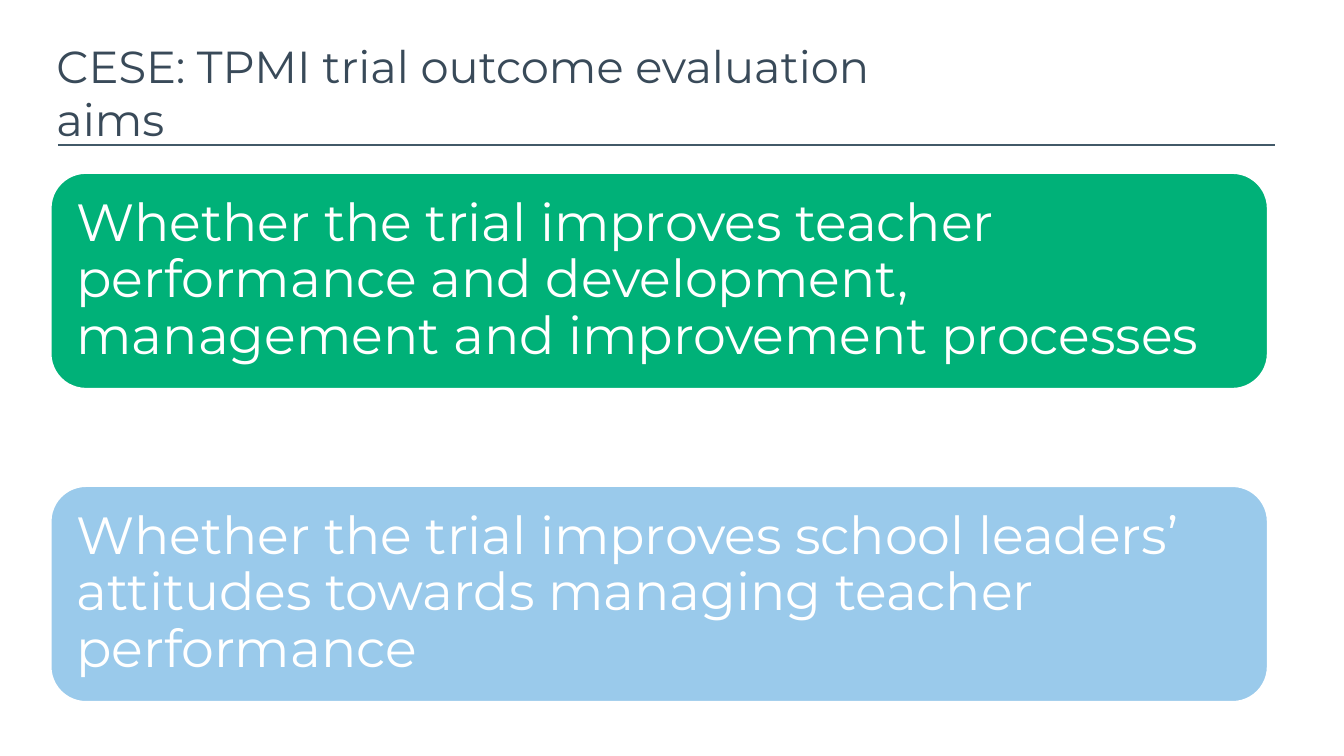
from dataclasses import dataclass

from lxml import etree
from pptx import Presentation
from pptx import util as u
from pptx.dml.color import RGBColor
from pptx.enum import shapes, text
from pptx.oxml.ns import qn


@dataclass(frozen=True)
class Theme:
    face: str = "Montserrat"
    ink: str = "394A59"
    rule: str = "425968"
    white: str = "FFFFFF"
    green: str = "00B178"
    blue: str = "9ACAEB"
    head: int = 24
    body: int = 28


theme = Theme()


def write(box, words, size, color, inset=(0.1, 0.05), lead=1.0):
    frame = box.text_frame
    frame.text = words
    frame.word_wrap = True
    frame.auto_size = text.MSO_AUTO_SIZE.NONE
    frame.vertical_anchor = text.MSO_ANCHOR.MIDDLE
    frame.margin_left = frame.margin_right = u.Inches(inset[0])
    frame.margin_top = frame.margin_bottom = u.Inches(inset[1])
    para = frame.paragraphs[0]
    para.alignment = text.PP_ALIGN.LEFT
    para.line_spacing = lead
    font = para.runs[0].font
    font.name = theme.face
    font.size = u.Pt(size)
    font.color.rgb = RGBColor.from_string(color)


deck = Presentation()
deck.slide_width = u.Inches(10)
deck.slide_height = u.Inches(10 * 9 / 16)
slide = deck.slides.add_slide(deck.slide_layouts[5])

# Rule under the title
rule = slide.shapes.add_connector(
    shapes.MSO_CONNECTOR.STRAIGHT,
    u.Inches(0.43), u.Inches(1.08), u.Inches(9.49), u.Inches(1.08))
rule.line.color.rgb = RGBColor.from_string(theme.rule)
rule.line.width = u.Pt(1)
etree.SubElement(rule._element.spPr, qn("a:effectLst"))

# Aim cards
aims = [
    ("Whether the trial improves teacher performance and development, "
     "management and improvement processes", theme.green),
    ("Whether the trial improves school leaders’ attitudes towards "
     "managing teacher performance", theme.blue),
]
left, top, wide, high = 0.37, 1.28, 9.07, 1.62
step, pad = 2.33, 0.08
for row, (words, color) in enumerate(aims):
    y = top + row * step
    card = slide.shapes.add_shape(
        shapes.MSO_SHAPE.ROUNDED_RECTANGLE,
        u.Inches(left), u.Inches(y), u.Inches(wide), u.Inches(high))
    card.shadow.inherit = False
    card.fill.solid()
    card.fill.fore_color.rgb = RGBColor.from_string(color)
    card.line.color.rgb = RGBColor.from_string(theme.white)
    card.line.width = u.Pt(2)
    label = slide.shapes.add_textbox(
        u.Inches(left + pad), u.Inches(y + pad),
        u.Inches(wide - 2 * pad), u.Inches(high - 2 * pad))
    write(label, words, theme.body, theme.white, inset=(0.12, 0.12), lead=0.9)

# Title
title = slide.shapes.title
title.left, title.top = u.Inches(0.32), u.Inches(0.39)
title.width, title.height = u.Inches(7.12), u.Inches(0.59)
write(title, "CESE: TPMI trial outcome evaluation aims", theme.head, theme.ink)

deck.save("out.pptx")
